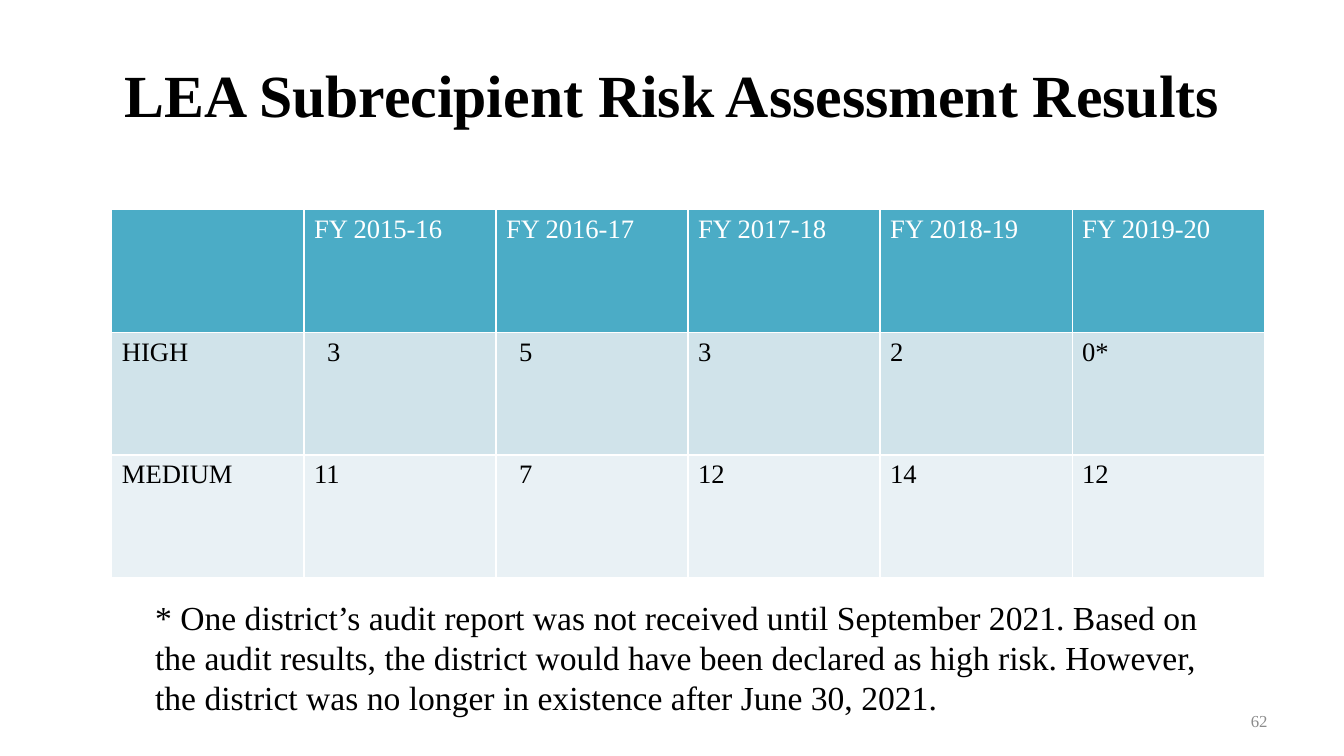
from pptx import Presentation
from pptx.dml.color import RGBColor
from pptx.enum.text import MSO_ANCHOR, PP_ALIGN
from pptx.util import Inches, Pt

BLACK = RGBColor(0x00, 0x00, 0x00)
WHITE = RGBColor(0xFF, 0xFF, 0xFF)
GRAY = RGBColor(0x8C, 0x8C, 0x8C)
TEAL = RGBColor(0x4B, 0xAC, 0xC6)
LIGHT_BLUE = RGBColor(0xD0, 0xE3, 0xEA)
PALE_BLUE = RGBColor(0xE9, 0xF1, 0xF5)
FONT = "Times New Roman"

TITLE = "LEA Subrecipient Risk Assessment Results"
NOTE = (
    "* One district’s audit report was not received until September 2021. "
    "Based on the audit results, the district would have been declared as high risk. "
    "However, the district was no longer in existence after June 30, 2021."
)
PAGE_NUMBER = "62"
RESULTS = [
    ["", "FY 2015-16", "FY 2016-17", "FY 2017-18", "FY 2018-19", "FY 2019-20"],
    ["HIGH", "3", "5", "3", "2", "0*"],
    ["MEDIUM", "11", "7", "12", "14", "12"],
]
ROW_COLORS = [(TEAL, WHITE), (LIGHT_BLUE, BLACK), (PALE_BLUE, BLACK)]
INDENTED_CELLS = {(1, 1), (1, 2), (2, 2)}
TABLE_AREA = (1.11, 2.08, 11.43, 3.65)
CELL_INDENT = 0.23

TEXTS = [
    (TITLE, (0.67, 0.3, 12, 1.25), MSO_ANCHOR.MIDDLE, PP_ALIGN.CENTER,
     {"size": Pt(42.7), "bold": True}, BLACK),
    (PAGE_NUMBER, (9.56, 6.95, 3.11, 0.4), MSO_ANCHOR.MIDDLE, PP_ALIGN.RIGHT,
     {"size": Pt(12)}, GRAY),
    (NOTE, (1.44, 5.87, 10.67, 1.31), MSO_ANCHOR.TOP, PP_ALIGN.LEFT,
     {"size": Pt(24)}, BLACK),
]


def write(para, text, formats, color):
    span = para.add_run()
    span.text = text
    for name, value in {"name": FONT, **formats}.items():
        setattr(span.font, name, value)
    span.font.color.rgb = color


def add_text(page, text, area, anchor, align, formats, color):
    box = page.shapes.add_textbox(*map(Inches, area))
    box.text_frame.word_wrap = True
    box.text_frame.vertical_anchor = anchor
    para = box.text_frame.paragraphs[0]
    para.alignment = align
    write(para, text, formats, color)


def add_results(page):
    row_count, column_count = len(RESULTS), len(RESULTS[0])
    table = page.shapes.add_table(row_count, column_count, *map(Inches, TABLE_AREA)).table
    for row, (values, (fill, color)) in enumerate(zip(RESULTS, ROW_COLORS)):
        for column, value in enumerate(values):
            cell = table.cell(row, column)
            cell.fill.solid()
            cell.fill.fore_color.rgb = fill
            if (row, column) in INDENTED_CELLS:
                cell.margin_left = Inches(CELL_INDENT)
            if value:
                write(cell.text_frame.paragraphs[0], value,
                      {"size": Pt(19), "bold": False}, color)


def main():
    deck = Presentation()
    deck.slide_width, deck.slide_height = Inches(13.33), Inches(7.5)
    page = deck.slides.add_slide(deck.slide_layouts[6])
    add_results(page)
    for item in TEXTS:
        add_text(page, *item)
    deck.save("out.pptx")


if __name__ == "__main__":
    main()
